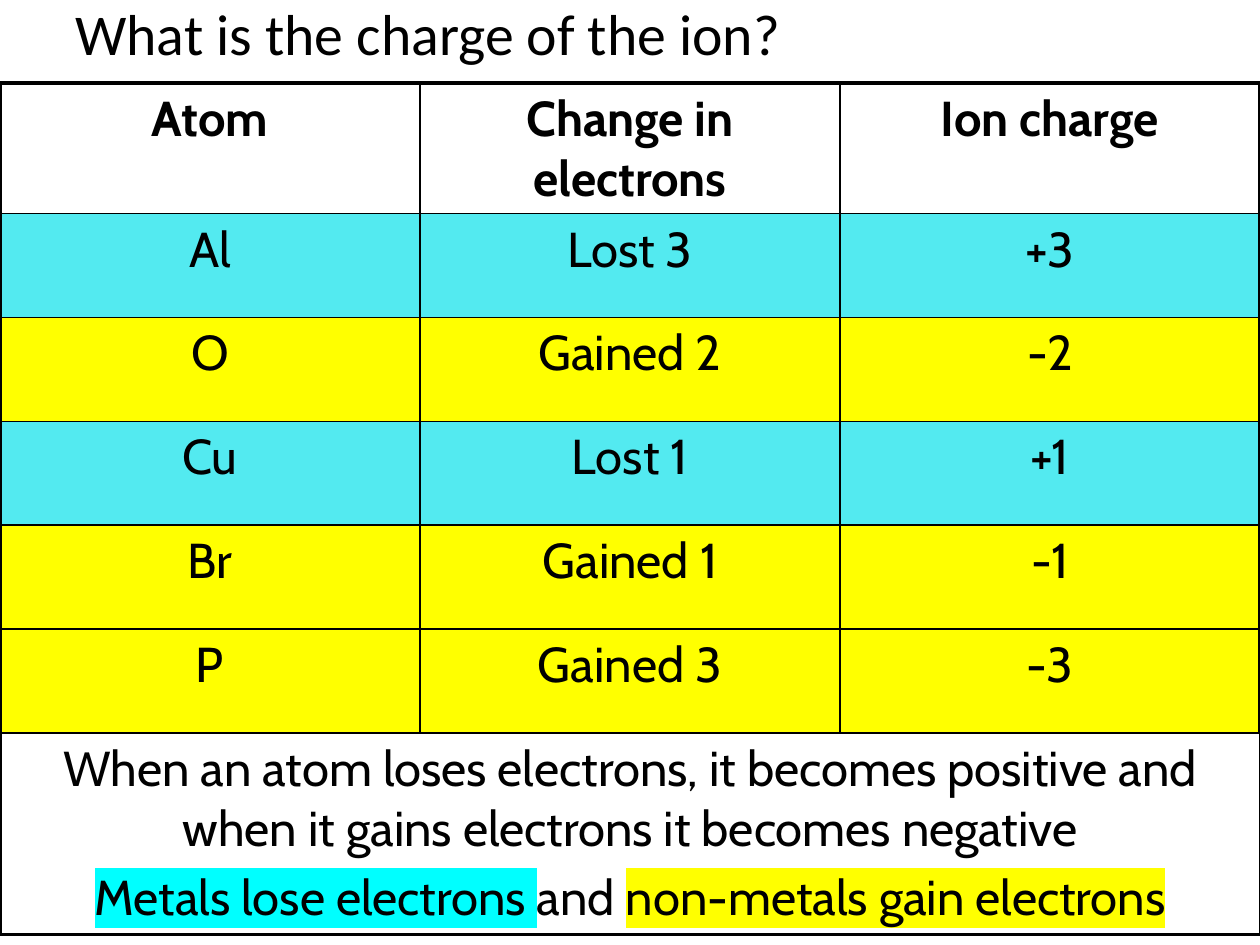
import dataclasses
import lxml.etree
import pptx
import pptx.dml.color
import pptx.enum.text
import pptx.oxml.ns
import pptx.util

Inches = pptx.util.Inches
Pt = pptx.util.Pt


@dataclasses.dataclass(frozen=True)
class Theme:
    ink: str = "000000"
    metal: str = "53EAF0"
    other: str = "FFFF00"
    mark: str = "00FFFF"
    head: str = "Calibri"
    body: str = "Cabin"
    big: float = 33
    text: float = 28
    gap: float = 5.6
    thin: float = 1
    thick: float = 2.25


class Deck:
    def __init__(self, theme):
        self.theme = theme
        self.file = pptx.Presentation()
        self.file.slide_width = Inches(10)
        self.file.slide_height = Inches(7.5)
        self.slide = self.file.slides.add_slide(self.file.slide_layouts[6])

    def run(self, para, text, font, size, bold=False, mark=None):
        run = para.add_run()
        run.text = text
        run.font.name = font
        run.font.size = Pt(size)
        run.font.bold = bold
        run.font.color.rgb = pptx.dml.color.RGBColor.from_string(self.theme.ink)
        if mark:
            qn = pptx.oxml.ns.qn
            light = lxml.etree.Element(qn("a:highlight"))
            lxml.etree.SubElement(light, qn("a:srgbClr"), val=mark)
            run.font._element.find(qn("a:latin")).addprevious(light)

    def title(self, text, left, top, width, height):
        box = self.slide.shapes.add_textbox(
            Inches(left), Inches(top), Inches(width), Inches(height))
        frame = box.text_frame
        frame.word_wrap = True
        frame.vertical_anchor = pptx.enum.text.MSO_ANCHOR.MIDDLE
        para = frame.paragraphs[0]
        para.line_spacing = 0.9
        self.run(para, text, self.theme.head, self.theme.big)

    def edge(self, cell, side, width):
        qn = pptx.oxml.ns.qn
        props = cell._tc.get_or_add_tcPr()
        line = lxml.etree.SubElement(props, qn("a:ln" + side), w=str(Pt(width)))
        fill = lxml.etree.SubElement(line, qn("a:solidFill"))
        lxml.etree.SubElement(fill, qn("a:srgbClr"), val=self.theme.ink)

    def cell(self, cell, paras, bold=False):
        frame = cell.text_frame
        for i, parts in enumerate(paras):
            para = frame.add_paragraph() if i else frame.paragraphs[0]
            para.alignment = pptx.enum.text.PP_ALIGN.CENTER
            para.space_before = Pt(self.theme.gap)
            for text, mark in parts:
                self.run(para, text, self.theme.body, self.theme.text, bold, mark)

    def table(self, rows, fills, notes, left, top, width, heights):
        wide, high = len(rows[0]), len(heights)
        table = self.slide.shapes.add_table(
            high, wide, Inches(left), Inches(top),
            Inches(width), Inches(sum(heights))).table
        table.first_row = table.horz_banding = False
        for row, height in zip(table.rows, heights):
            row.height = Inches(height)
        for r in range(high):
            for c in range(wide):
                cell = table.cell(r, c)
                outer = {"L": c == 0, "R": c == wide - 1,
                         "T": r == 0, "B": r == high - 1}
                for side, rim in outer.items():
                    self.edge(cell, side, self.theme.thick if rim else self.theme.thin)
                if fills[r]:
                    cell.fill.solid()
                    cell.fill.fore_color.rgb = pptx.dml.color.RGBColor.from_string(fills[r])
                else:
                    cell.fill.background()
                if r < len(rows):
                    self.cell(cell, [[(rows[r][c], None)]], bold=r == 0)
        foot = table.cell(high - 1, 0)
        foot.merge(table.cell(high - 1, wide - 1))
        self.cell(foot, notes)


def main():
    theme = Theme()
    deck = Deck(theme)
    deck.title("What is the charge of the ion?", 0.5, -0.33, 9, 1.25)
    rows = [
        ("Atom", "Change in electrons", "Ion charge"),
        ("Al", "Lost 3", "+3"),
        ("O", "Gained 2", "-2"),
        ("Cu", "Lost 1", "+1"),
        ("Br", "Gained 1", "-1"),
        ("P", "Gained 3", "-3"),
    ]
    fills = [theme.metal if row[2].startswith("+") else theme.other
             for row in rows[1:]]
    notes = [
        [("When an atom loses electrons, it becomes positive and "
          "when it gains electrons it becomes negative", None)],
        [("Metals lose electrons ", theme.mark), ("and ", None),
         ("non-metals gain electrons", theme.other)],
    ]
    heights = [1.03] + [0.825] * len(fills) + [1.6]
    deck.table(rows, [None, *fills, None], notes, 0, 0.66, 10, heights)
    deck.file.save("out.pptx")


if __name__ == "__main__":
    main()
